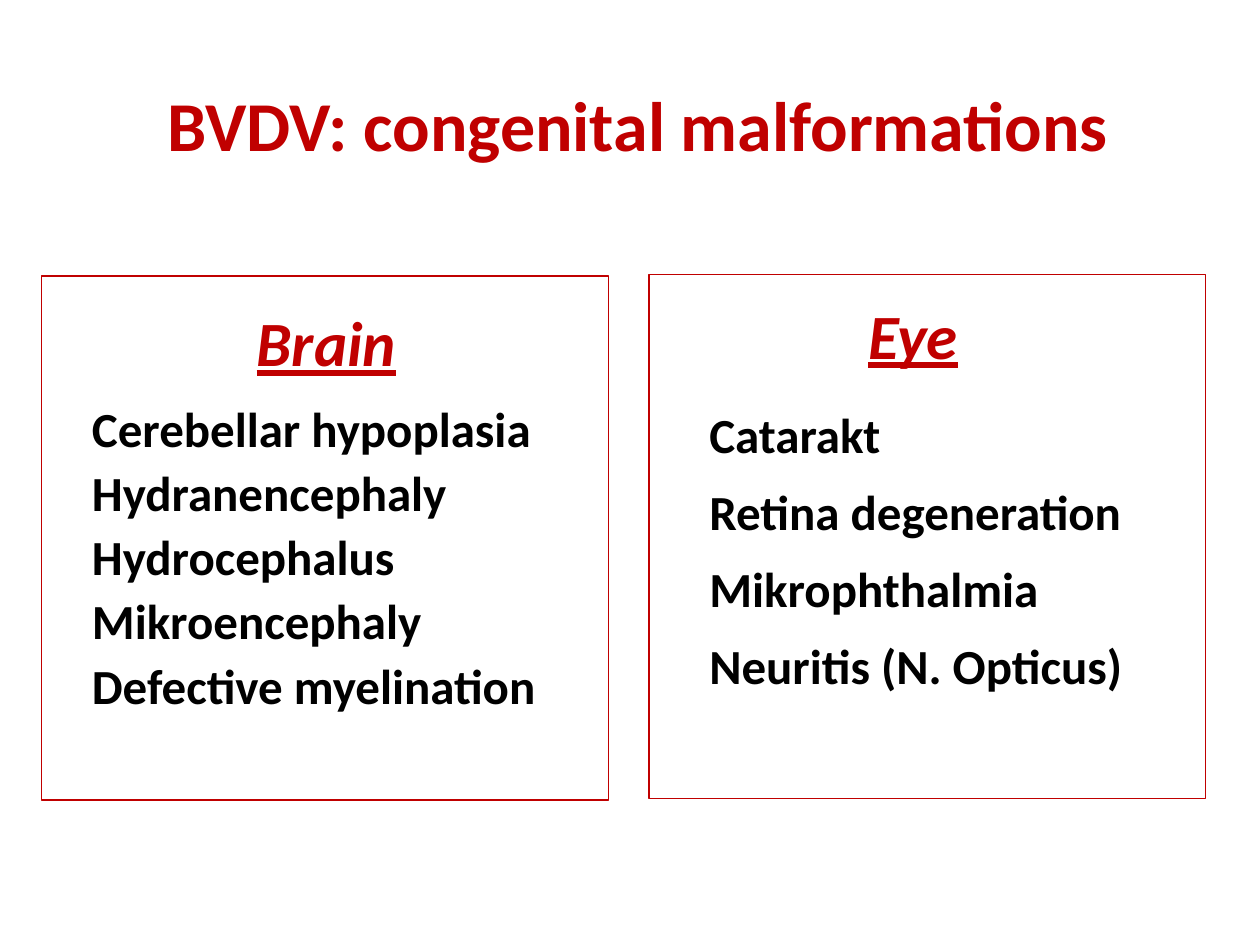
from pptx import Presentation
from pptx.dml.color import RGBColor
from pptx.enum import shapes, text
from pptx.util import Inches, Pt

COLORS = {"accent": "C00000", "body": "000000", "paper": "FFFFFF"}
TITLE = {"size": Pt(40), "bold": True}
HEADING = {"size": Pt(36), "bold": True, "italic": True, "underline": True}
ITEM = {"size": Pt(28), "bold": True}

# Each panel: frame and heading boxes, then items as (wording, width)
PANELS = [
    {"frame": (5.15, 2.18, 4.42, 4.16),
     "heading": ("Eye", (6.65, 2.35, 1.19, 0.61)),
     "left": 5.63, "top": 3.21, "step": 0.61,
     "items": [("Catarakt", 1.38), ("Retina degeneration", 3.31),
               ("Mikrophthalmia", 2.62), ("Neuritis (N. Opticus)", 3.32)]},
    {"frame": (0.33, 2.19, 4.5, 4.16),
     "heading": ("Brain", (2.03, 2.41, 1.12, 0.61)),
     "left": 0.73, "top": 3.16, "step": 0.51,
     "items": [("Cerebellar hypoplasia", 3.52), ("Hydranencephaly", 2.84),
               ("Hydrocephalus", 2.43), ("Mikroencephaly", 2.62),
               ("Defective myelination", 3.57)]},
]


def rgb(name):
    return RGBColor.from_string(COLORS[name])


def inches(box):
    return [Inches(length) for length in box]


def write(frame, wording, style, color, align):
    """Put one formatted line into a text frame that fits its wording."""
    frame.word_wrap = False
    frame.auto_size = text.MSO_AUTO_SIZE.SHAPE_TO_FIT_TEXT
    frame.vertical_anchor = text.MSO_ANCHOR.TOP
    line = frame.paragraphs[0]
    line.alignment = align
    run = line.add_run()
    run.text = wording
    run.font.name = "Calibri"
    run.font.color.rgb = rgb(color)
    for attribute, value in style.items():
        setattr(run.font, attribute, value)


def add_title(slide, wording, box):
    title = slide.shapes.title
    title.left, title.top, title.width, title.height = inches(box)
    title.fill.solid()
    title.fill.fore_color.rgb = rgb("paper")
    write(title.text_frame, wording, TITLE, "accent", text.PP_ALIGN.CENTER)


def add_frame(slide, box):
    frame = slide.shapes.add_shape(shapes.MSO_SHAPE.RECTANGLE, *inches(box))
    frame.shadow.inherit = False
    frame.fill.background()
    frame.line.color.rgb = rgb("accent")
    frame.line.width = Pt(0)


def add_label(slide, wording, box, style, color, align=text.PP_ALIGN.LEFT):
    label = slide.shapes.add_textbox(*inches(box)).text_frame
    for side in ("left", "top", "right", "bottom"):
        setattr(label, f"margin_{side}", 0)
    write(label, wording, style, color, align)


def add_panel(slide, panel):
    add_frame(slide, panel["frame"])
    heading, box = panel["heading"]
    add_label(slide, heading, box, HEADING, "accent", text.PP_ALIGN.CENTER)
    # Evenly spaced findings
    for row, (finding, width) in enumerate(panel["items"]):
        top = panel["top"] + row * panel["step"]
        add_label(slide, finding, (panel["left"], top, width, 0.47), ITEM, "body")


def main():
    deck = Presentation()
    deck.slide_width, deck.slide_height = Inches(10), Inches(7.5)
    slide = deck.slides.add_slide(deck.slide_layouts[5])
    add_title(slide, "BVDV: congenital malformations", (1.18, 0.6, 7.76, 0.77))
    for panel in PANELS:
        add_panel(slide, panel)
    deck.save("out.pptx")


if __name__ == "__main__":
    main()
